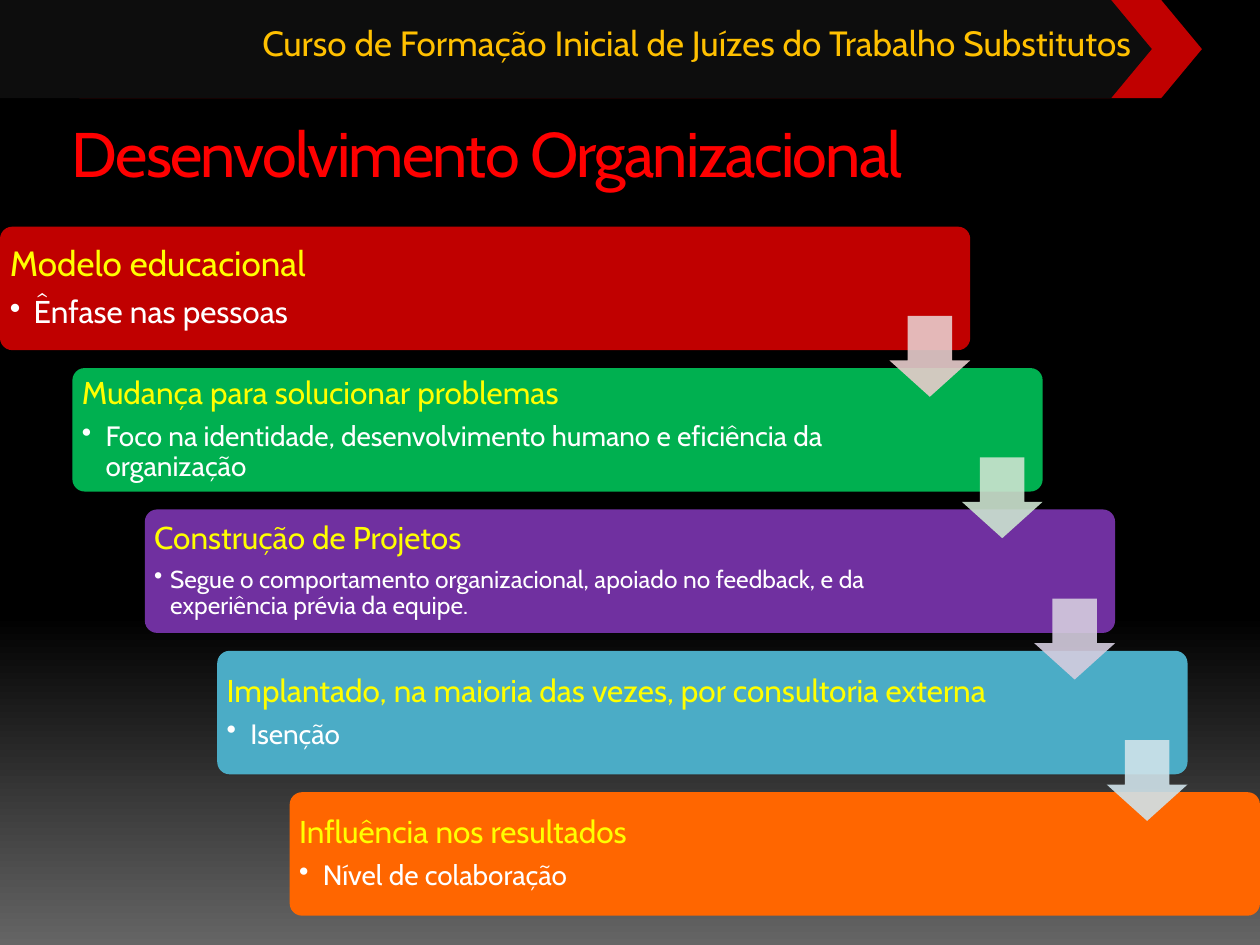
from lxml.etree import SubElement
from pptx import Presentation
from pptx.dml.color import RGBColor
from pptx.enum.shapes import MSO_SHAPE
from pptx.enum.text import MSO_ANCHOR, MSO_AUTO_SIZE, PP_ALIGN
from pptx.oxml.ns import qn
from pptx.util import Cm, Pt

FONT = "Cabin"
HUES = {
    "black": "000000", "gray": "656565", "dark": "0D0D0D", "white": "FFFFFF",
    "gold": "FFC000", "yellow": "FFFF00", "bright": "FF0000",
    "red": "C00000", "green": "00B050", "purple": "7030A0",
    "blue": "4BACC6", "orange": "FF6600",
    "pale red": "E8CCCC", "pale green": "CCE4D0",
    "pale purple": "D5CDDF", "pale blue": "D0E3EA",
}
LEFT, TOP, WIDE, HIGH = 0, 4.57, 19.56, 2.49
STEP_X, STEP_Y = 1.46, 2.85
ARROW, DROP = 1.63, 1.8
STEPS = [
    ("red", "Modelo educacional", 20, "Ênfase nas pessoas", 18, 0.48, 16.71, 0.2),
    ("green", "Mudança para solucionar problemas", 18,
     "Foco na identidade, desenvolvimento humano e eficiência da organização",
     16, 0.48, 16.48, 0.19),
    ("purple", "Construção de Projetos", 18,
     "Segue o comportamento organizacional, apoiado no feedback, "
     "e da experiência prévia da equipe.", 14, 0.32, 16.48, 0.19),
    ("blue", "Implantado, na maioria das vezes, por consultoria externa", 18,
     "Isenção", 16, 0.48, 16.48, 0.19),
    ("orange", "Influência nos resultados", 18,
     "Nível de colaboração", 16, 0.48, 16.48, 0.19),
]


def tint(name):
    return RGBColor.from_string(HUES[name])


def add_form(slide, kind, box, hue, *bends):
    form = slide.shapes.add_shape(kind, *map(Cm, box))
    form.shadow.inherit = False
    form.fill.solid()
    form.fill.fore_color.rgb = tint(hue)
    form.line.fill.background()
    for i, bend in enumerate(bends):
        form.adjustments[i] = bend
    return form


def set_frame(frame, pads, anchor):
    frame.word_wrap = True
    frame.auto_size = MSO_AUTO_SIZE.NONE
    frame.vertical_anchor = anchor
    (frame.margin_left, frame.margin_top,
     frame.margin_right, frame.margin_bottom) = map(Cm, pads)


def add_run(para, text, size, hue):
    run = para.add_run()
    run.text = text
    run.font.name = FONT
    run.font.size = Pt(size)
    run.font.color.rgb = tint(hue)
    return run


def add_dot(para, gap):
    props = para._p.get_or_add_pPr()
    props.set("marL", str(Cm(gap)))
    props.set("indent", str(-Cm(gap)))
    SubElement(props, qn("a:buChar")).set("char", "•")


def space(para, size, share):
    para.line_spacing = 0.9
    para.space_after = Pt(round(size * share, 1))


def paint_back(slide):
    fill = slide.background.fill
    fill.gradient()
    fill.gradient_angle = 270
    for stop, hue, place in zip(fill.gradient_stops, ("black", "gray"), (0.65, 1)):
        stop.color.rgb = tint(hue)
        stop.position = place


def add_head(slide):
    for left, wide, hue in ((1.6, 22.63, "red"), (0, 23.22, "dark")):
        add_form(slide, MSO_SHAPE.PENTAGON, (left, 0, wide, 1.98), hue, 0.415)
    box = slide.shapes.add_textbox(Cm(4.17), Cm(0.3), Cm(18.64), Cm(1.12))
    set_frame(box.text_frame, (0.25, 0.13, 0, 0.13), MSO_ANCHOR.TOP)
    para = box.text_frame.paragraphs[0]
    para.alignment = PP_ALIGN.RIGHT
    add_run(para, "Curso de Formação Inicial de Juízes do Trabalho Substitutos",
            20, "gold")


def add_title(slide):
    title = slide.shapes.title
    title.left, title.top = Cm(1.2), Cm(2.18)
    title.width, title.height = Cm(22.94), Cm(2.54)
    set_frame(title.text_frame, (0.25, 0.13, 0.25, 0.13), MSO_ANCHOR.TOP)
    para = title.text_frame.paragraphs[0]
    para.alignment = PP_ALIGN.LEFT
    run = add_run(para, "Desenvolvimento Organizacional", 36, "bright")
    run.font._element.set("spc", "-100")


def add_step(slide, rank, step):
    hue, head, big, note, small, gap, wide, pad = step
    left, top = LEFT + rank * STEP_X, TOP + rank * STEP_Y
    add_form(slide, MSO_SHAPE.ROUNDED_RECTANGLE, (left, top, WIDE, HIGH), hue, 0.1)
    box = slide.shapes.add_textbox(*map(Cm, (left, top, wide, HIGH)))
    frame = box.text_frame
    set_frame(frame, (pad,) * 4, MSO_ANCHOR.MIDDLE)
    para = frame.paragraphs[0]
    space(para, big, 0.35)
    add_run(para, head, big, "yellow")
    para = frame.add_paragraph()
    para.level = 1
    add_dot(para, gap)
    space(para, small, 0.15)
    add_run(para, note, small, "white")


def add_arrow(slide, rank, hue):
    left = LEFT + rank * STEP_X + WIDE - ARROW
    top = TOP + rank * STEP_Y + DROP
    form = add_form(slide, MSO_SHAPE.DOWN_ARROW, (left, top, ARROW, ARROW),
                    "pale " + hue, 0.55, 0.45)
    shade = form._element.spPr.find(qn("a:solidFill"))[0]
    SubElement(shade, qn("a:alpha")).set("val", "90000")


def main():
    deck = Presentation()
    deck.slide_width, deck.slide_height = Cm(25.4), Cm(19.05)
    slide = deck.slides.add_slide(deck.slide_layouts[5])
    paint_back(slide)
    add_head(slide)
    add_title(slide)
    for rank, step in enumerate(STEPS):
        add_step(slide, rank, step)
    for rank, step in enumerate(STEPS[:-1]):
        add_arrow(slide, rank, step[0])
    deck.save("out.pptx")


if __name__ == "__main__":
    main()
